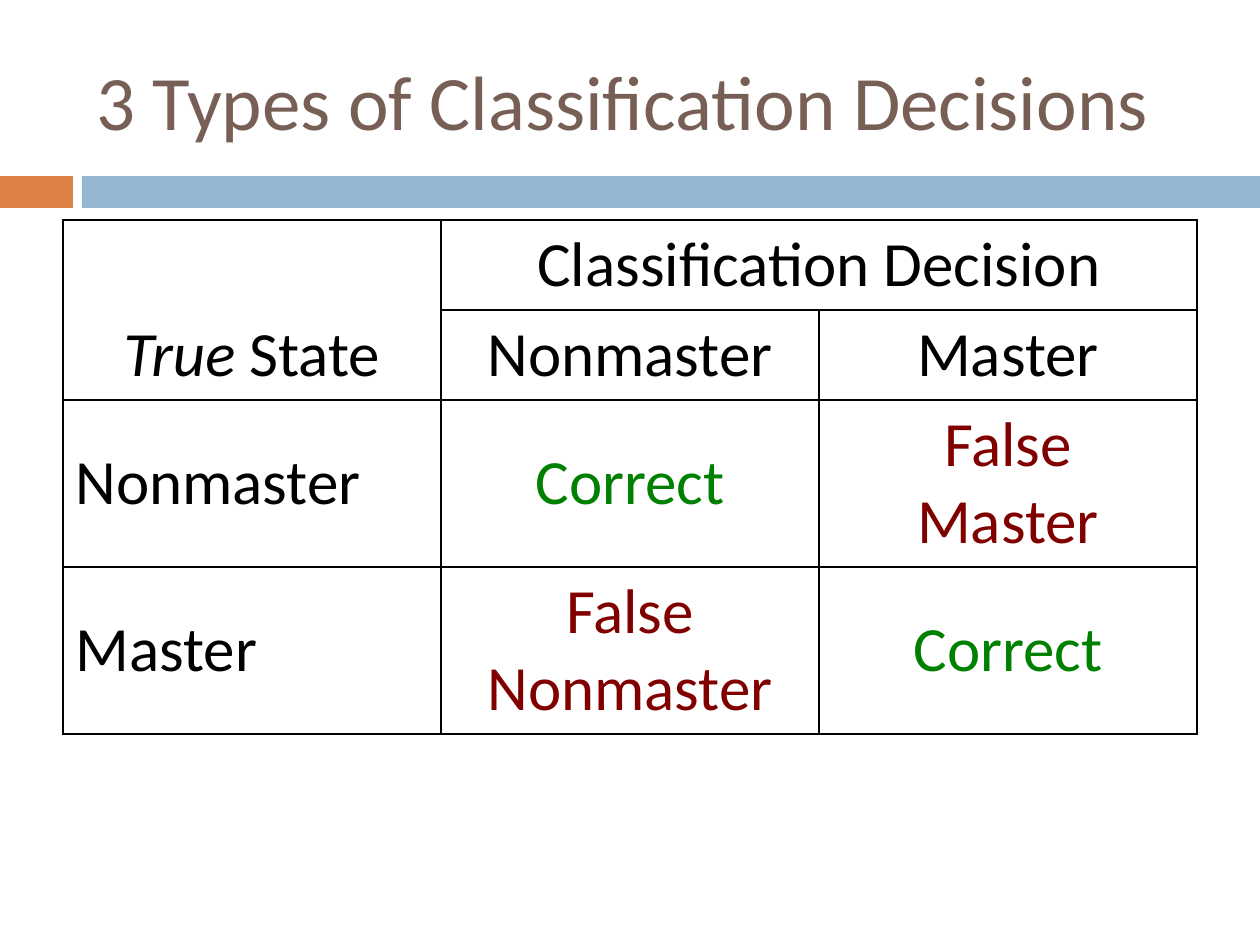
from lxml.etree import SubElement as Sub
from pptx import Presentation
from pptx.dml.color import RGBColor as RGB
from pptx.enum.shapes import MSO_SHAPE as Shape
from pptx.enum.text import MSO_ANCHOR as Anchor, PP_ALIGN as Align
from pptx.oxml.ns import qn
from pptx.util import Pt

SCALE = 914400 / 126
FONT = "Calibri"
HUES = {
    "black": "000000",
    "brown": "775F55",
    "orange": "DD8047",
    "blue": "94B6D2",
    "green": "008000",
    "red": "800000",
}
RIGHT = {"hue": "green"}
WRONG = {"hue": "red"}
SIDE = {"align": Align.LEFT}

# row, column, text, format
CELLS = [
    (0, 0, "*True* State", {"anchor": Anchor.BOTTOM}),
    (0, 1, "Classification Decision", {"anchor": Anchor.TOP}),
    (1, 1, "Nonmaster", {"anchor": Anchor.TOP}),
    (1, 2, "Master", {"anchor": Anchor.TOP}),
    (2, 0, "Nonmaster", SIDE),
    (2, 1, "Correct", RIGHT),
    (2, 2, "False\nMaster", WRONG),
    (3, 0, "Master", SIDE),
    (3, 1, "False\nNonmaster", WRONG),
    (3, 2, "Correct", RIGHT),
]


def px(*sizes):
    """Turn px lengths into a list of EMU."""
    return [round(size * SCALE) for size in sizes]


def write(frame, text, size=36, hue="black", align=Align.CENTER):
    """Fill a text frame: newlines part paragraphs, stars enclose italics."""
    for row, line in enumerate(text.split("\n")):
        para = frame.add_paragraph() if row else frame.paragraphs[0]
        para.alignment = align
        for turn, part in enumerate(line.split("*")):
            if part:
                run = para.add_run()
                run.text = part
                run.font.name = FONT
                run.font.size = Pt(size)
                run.font.italic = turn % 2 == 1
                run.font.color.rgb = RGB.from_string(HUES[hue])


class Deck:
    def __init__(self, wide, high):
        self.file = Presentation()
        self.file.slide_width, self.file.slide_height = px(wide, high)
        self.slide = self.file.slides.add_slide(self.file.slide_layouts[5])

    def bar(self, box, hue):
        shape = self.slide.shapes.add_shape(Shape.RECTANGLE, *px(*box))
        shape.shadow.inherit = False
        shape.fill.solid()
        shape.fill.fore_color.rgb = RGB.from_string(HUES[hue])
        shape.line.fill.background()

    def title(self, box, text, **style):
        shape = self.slide.shapes.title
        shape.left, shape.top, shape.width, shape.height = px(*box)
        shape.text_frame.vertical_anchor = Anchor.MIDDLE
        write(shape.text_frame, text, **style)

    def table(self, left, top, cols, rows):
        box = px(left, top, sum(cols), sum(rows))
        grid = self.slide.shapes.add_table(len(rows), len(cols), *box).table
        grid.first_row = grid.horz_banding = False
        for col, wide in zip(grid.columns, px(*cols)):
            col.width = wide
        for row, high in zip(grid.rows, px(*rows)):
            row.height = high
        for cell in grid.iter_cells():
            self.border(cell)
            cell.fill.background()
        return grid

    def border(self, cell, hue="black"):
        props = cell._tc.get_or_add_tcPr()
        for side in "LRTB":
            line = Sub(props, qn("a:ln" + side), w=str(Pt(1)))
            fill = Sub(line, qn("a:solidFill"))
            Sub(fill, qn("a:srgbClr"), val=HUES[hue])

    def cell(self, cell, text, anchor=Anchor.MIDDLE, **style):
        cell.vertical_anchor = anchor
        write(cell.text_frame, text, **style)


def main():
    deck = Deck(1260, 945)
    deck.bar((0, 176, 73, 32), "orange")
    deck.bar((82, 176, 1178, 32), "blue")
    deck.title((84, 32, 1124, 136), "3 Types of Classification Decisions",
               size=44, hue="brown", align=Align.LEFT)

    grid = deck.table(63, 220, [378] * 3, [90, 90, 167, 167])
    grid.cell(0, 0).merge(grid.cell(1, 0))
    grid.cell(0, 1).merge(grid.cell(0, 2))
    for row, col, text, style in CELLS:
        deck.cell(grid.cell(row, col), text, **style)

    deck.file.save("out.pptx")


if __name__ == "__main__":
    main()
